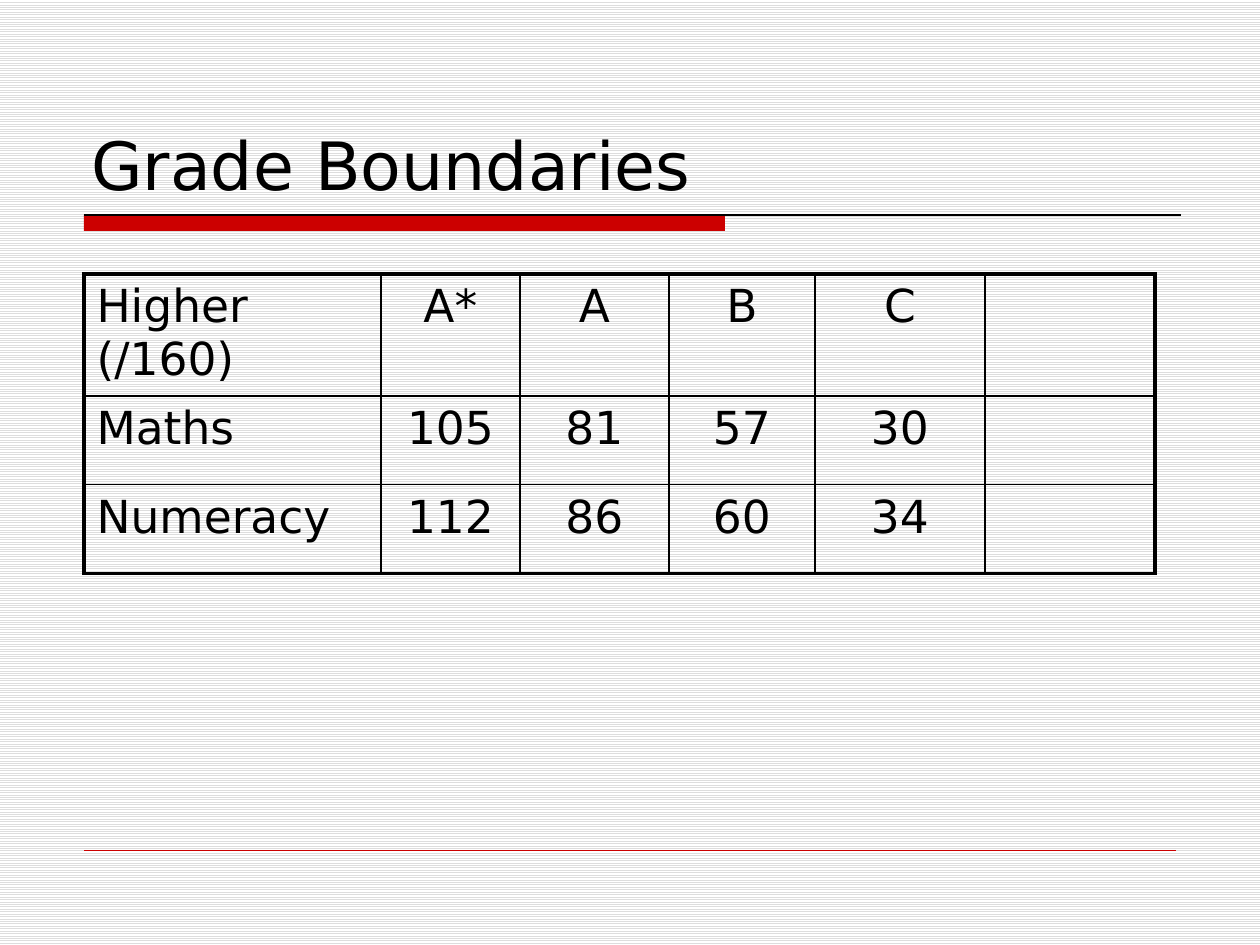
from lxml import etree
from pptx import Presentation, util as u
from pptx.dml.color import RGBColor
from pptx.enum import dml, shapes, text
from pptx.oxml import ns

FONT = "DejaVu Sans"
BLACK = "000000"
RED = "CC0000"
COLUMNS = [297, 139, 149, 146, 170, 170]
ROW_HEIGHT = 89
GRADES = [
    ["Higher (/160)", "A*", "A", "B", "C", ""],
    ["Maths", "105", "81", "57", "30", ""],
    ["Numeracy", "112", "86", "60", "34", ""],
]


def px(length):
    return u.Emu(round(length * 914400 / 126))


def color(value):
    return RGBColor.from_string(value)


def write(frame, content, size, align=text.PP_ALIGN.LEFT, anchor=text.MSO_ANCHOR.TOP):
    frame.word_wrap = True
    frame.vertical_anchor = anchor
    paragraph = frame.paragraphs[0]
    paragraph.alignment = align
    run = paragraph.add_run()
    run.text = content
    run.font.name = FONT
    run.font.size = u.Pt(size)
    run.font.color.rgb = color(BLACK)


def add_background(slide):
    fill = slide.background.fill
    fill.patterned()
    fill.pattern = dml.MSO_PATTERN.LIGHT_HORIZONTAL
    fill.fore_color.rgb = color("DDDDDD")
    fill.back_color.rgb = color("FFFFFF")


def add_bar(slide, left, top, width, height):
    shape = slide.shapes.add_shape(
        shapes.MSO_SHAPE.RECTANGLE, px(left), px(top), px(width), px(height))
    shape.shadow.inherit = False
    shape.fill.solid()
    shape.fill.fore_color.rgb = color(RED)
    shape.line.fill.background()


def add_rule(slide, left, right, y, line_color, weight):
    connector = slide.shapes.add_connector(
        shapes.MSO_CONNECTOR.STRAIGHT, px(left), px(y), px(right), px(y))
    connector.line.color.rgb = color(line_color)
    connector.line.width = u.Pt(weight)
    etree.SubElement(connector._element.spPr, ns.qn("a:effectLst"))


def add_title(slide, content):
    box = slide.shapes.add_textbox(px(79), px(42), px(1102), px(168))
    write(box.text_frame, content, 38, anchor=text.MSO_ANCHOR.BOTTOM)


def set_borders(cell, outer_sides):
    properties = cell._tc.get_or_add_tcPr()
    for side in "LRTB":
        weight = 2.25 if side in outer_sides else 1
        line = etree.SubElement(properties, ns.qn(f"a:ln{side}"), w=str(u.Pt(weight)))
        fill = etree.SubElement(line, ns.qn("a:solidFill"))
        etree.SubElement(fill, ns.qn("a:srgbClr"), val=BLACK)


def add_grades(slide, left, top):
    last_row, last_column = len(GRADES) - 1, len(COLUMNS) - 1
    table = slide.shapes.add_table(
        len(GRADES), len(COLUMNS), px(left), px(top),
        px(sum(COLUMNS)), px(ROW_HEIGHT * len(GRADES))).table
    table.first_row = False
    table.horz_banding = False
    for column, width in zip(table.columns, COLUMNS):
        column.width = px(width)
    for i, values in enumerate(GRADES):
        table.rows[i].height = px(ROW_HEIGHT)
        for j, value in enumerate(values):
            cell = table.cell(i, j)
            edges = {"L": j == 0, "R": j == last_column, "T": i == 0, "B": i == last_row}
            set_borders(cell, [side for side, outer in edges.items() if outer])
            cell.fill.background()
            if value:
                align = text.PP_ALIGN.CENTER if j else text.PP_ALIGN.LEFT
                write(cell.text_frame, value, 26, align=align)


def main():
    presentation = Presentation()
    presentation.slide_width = px(1260)
    presentation.slide_height = px(945)
    slide = presentation.slides.add_slide(presentation.slide_layouts[6])
    add_background(slide)
    add_bar(slide, 84, 215, 641, 16)
    add_rule(slide, 84, 1181, 215, BLACK, 0.75)
    add_rule(slide, 84, 1176, 850, RED, 0.25)
    add_title(slide, "Grade Boundaries")
    add_grades(slide, 84, 274)
    presentation.save("out.pptx")


if __name__ == "__main__":
    main()
